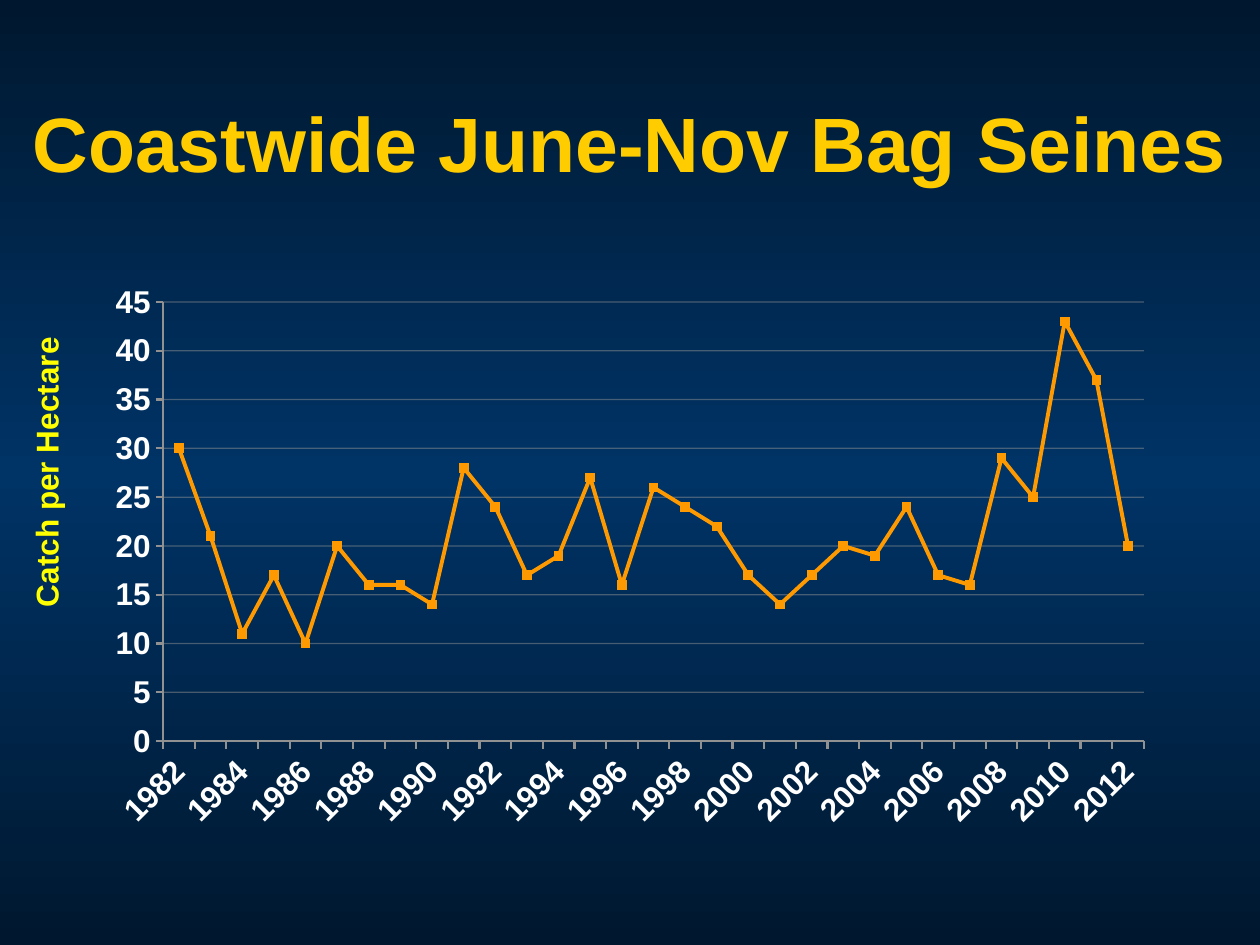
from copy import deepcopy
from dataclasses import dataclass

from lxml.etree import SubElement
from pptx import Presentation
from pptx.chart.data import CategoryChartData
from pptx.dml.color import RGBColor
from pptx.enum.chart import XL_CHART_TYPE, XL_MARKER_STYLE, XL_TICK_MARK
from pptx.enum.text import MSO_ANCHOR, PP_ALIGN
from pptx.oxml import parse_xml
from pptx.oxml.ns import nsdecls, qn
from pptx.util import Pt

FONT = "Arial"
NAVY, BLUE = "00182F", "003366"
GOLD, YELLOW, WHITE = "FFCC00", "FFFF00", "FFFFFF"
ORANGE, GRAY = "FF9900", "919191"

FIRST_YEAR = 1982
CATCH_RATES = [30, 21, 11, 17, 10, 20, 16, 16, 14, 28, 24, 17, 19, 27, 16, 26,
               24, 22, 17, 14, 17, 20, 19, 24, 17, 16, 29, 25, 43, 37, 20]


@dataclass
class Box:
    left: float
    top: float
    width: float
    height: float

    def in_points(self) -> tuple:
        return Pt(self.left), Pt(self.top), Pt(self.width), Pt(self.height)


def rgb(color: str) -> RGBColor:
    return RGBColor.from_string(color)


def style_font(font, size: float, color: str, bold: bool = True) -> None:
    font.name, font.size, font.bold = FONT, Pt(size), bold
    font.color.rgb = rgb(color)


def style_line(line, color: str, width: float) -> None:
    line.color.rgb = rgb(color)
    line.width = Pt(width)


def add_text(slide, box: Box, text: str, *, size: float, color: str,
             align=PP_ALIGN.LEFT, anchor=MSO_ANCHOR.TOP, vertical: str = "horz") -> None:
    frame = slide.shapes.add_textbox(*box.in_points()).text_frame
    frame.word_wrap = True
    frame.vertical_anchor = anchor
    frame._txBody.bodyPr.set("vert", vertical)
    paragraph = frame.paragraphs[0]
    paragraph.alignment = align
    run = paragraph.add_run()
    run.text = text
    style_font(run.font, size, color)


def paint_background(slide, edge: str, middle: str) -> None:
    fill = slide.background.fill
    fill.gradient()
    fill.gradient_angle = 90
    first, last = fill.gradient_stops
    for stop, position in ((first, 0), (last, 1)):
        stop.color.rgb = rgb(edge)
        stop.position = position
    center = deepcopy(first._gs)
    first._gs.addnext(center)
    fill.gradient_stops[1].color.rgb = rgb(middle)
    fill.gradient_stops[1].position = 0.5


def style_axis(axis) -> None:
    axis.major_tick_mark = XL_TICK_MARK.OUTSIDE
    axis.minor_tick_mark = XL_TICK_MARK.NONE
    style_font(axis.tick_labels.font, 18, WHITE)
    style_line(axis.format.line, GRAY, 1.25)


def place_plot(chart, box: Box, plot: Box) -> None:
    """Fix the inner plot area; both boxes are in slide points."""
    fractions = {"x": (plot.left - box.left) / box.width,
                 "y": (plot.top - box.top) / box.height,
                 "w": plot.width / box.width,
                 "h": plot.height / box.height}
    sizes = "".join(f'<c:{name} val="{value:.4f}"/>' for name, value in fractions.items())
    plot_area = chart._chartSpace.find(".//" + qn("c:plotArea"))
    for layout in plot_area.findall(qn("c:layout")):
        plot_area.remove(layout)
    plot_area.insert(0, parse_xml(
        f'<c:layout {nsdecls("c")}><c:manualLayout><c:layoutTarget val="inner"/>'
        f'<c:xMode val="edge"/><c:yMode val="edge"/>{sizes}</c:manualLayout></c:layout>'))


def add_catch_chart(slide, box: Box, plot: Box) -> None:
    catch_data = CategoryChartData(number_format="General")
    catch_data.categories = range(FIRST_YEAR, FIRST_YEAR + len(CATCH_RATES))
    catch_data.add_series("Series 1", CATCH_RATES)
    chart = slide.shapes.add_chart(
        XL_CHART_TYPE.LINE_MARKERS, *box.in_points(), catch_data).chart
    chart.has_legend = chart.has_title = False
    style_font(chart.font, 18, YELLOW)
    place_plot(chart, box, plot)

    # Years: slanted, every second one labelled
    years = chart.category_axis
    style_axis(years)
    years.has_major_gridlines = False
    label_body = years._element.find(qn("c:txPr")).find(qn("a:bodyPr"))
    label_body.set("rot", str(-45 * 60000))
    label_body.set("vert", "horz")
    skip = parse_xml(f'<c:tickLblSkip {nsdecls("c")} val="2"/>')
    years._element.find(qn("c:noMultiLvlLbl")).addprevious(skip)

    # Catch scale with half-transparent gridlines
    scale = chart.value_axis
    style_axis(scale)
    scale.minimum_scale, scale.maximum_scale, scale.major_unit = 0, 45, 5
    scale.has_major_gridlines = True
    grid = scale.major_gridlines
    style_line(grid.format.line, GRAY, 0.75)
    grid_color = scale._element.find(qn("c:majorGridlines")).find(".//" + qn("a:srgbClr"))
    SubElement(grid_color, qn("a:alpha")).set("val", "50000")

    # Catch line
    chart.plots[0].vary_by_categories = False
    catch = chart.plots[0].series[0]
    catch.smooth = False
    style_line(catch.format.line, ORANGE, 2.25)
    catch.marker.style = XL_MARKER_STYLE.SQUARE
    catch.marker.size = 5
    catch.marker.format.fill.solid()
    catch.marker.format.fill.fore_color.rgb = rgb(ORANGE)
    style_line(catch.marker.format.line, ORANGE, 0.75)


def main() -> None:
    deck = Presentation()
    deck.slide_width, deck.slide_height = Pt(720), Pt(540)
    slide = deck.slides.add_slide(deck.slide_layouts[6])
    paint_background(slide, NAVY, BLUE)

    add_text(slide, Box(0, 36, 720, 90), "Coastwide June-Nov Bag Seines",
             size=44, color=GOLD, align=PP_ALIGN.CENTER, anchor=MSO_ANCHOR.MIDDLE)
    add_catch_chart(slide, Box(54, 156, 612, 324), plot=Box(93.2, 172.6, 560.5, 251))
    add_text(slide, Box(12, 180, 36, 174), "Catch per Hectare",
             size=18, color=YELLOW, vertical="vert270")

    deck.save("out.pptx")


if __name__ == "__main__":
    main()
